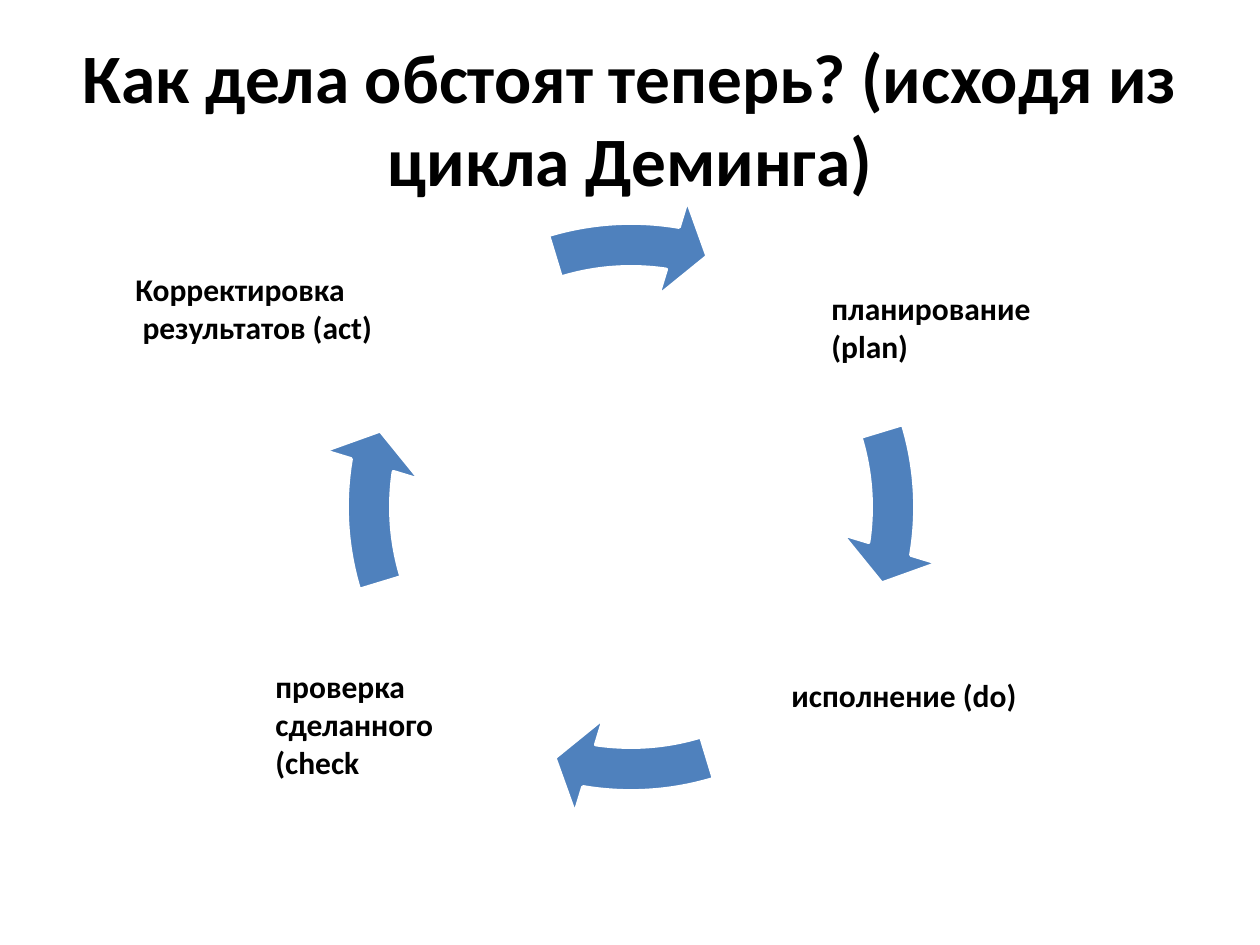
import pptx
import pptx.dml.color
import pptx.enum.shapes
import pptx.enum.text
import pptx.util
from dataclasses import dataclass


@dataclass(frozen=True)
class Theme:
    font: str = "Calibri"
    ink: str = "000000"
    blue: str = "4F81BD"
    edge: str = "FFFFFF"
    head: float = 39.6
    body: float = 18


theme = Theme()
SCALE = 914400 / 126  # EMU per px


def box(*sizes):
    """Turn px lengths into EMU."""
    return [pptx.util.Emu(round(size * SCALE)) for size in sizes]


def style(frame, size):
    for line in frame.paragraphs:
        for run in line.runs:
            run.font.name = theme.font
            run.font.size = pptx.util.Pt(size)
            run.font.bold = True
            run.font.color.rgb = pptx.dml.color.RGBColor.from_string(theme.ink)


deck = pptx.Presentation()
deck.slide_width, deck.slide_height = box(1260, 945)
slide = deck.slides.add_slide(deck.slide_layouts[5])

title = slide.shapes.title
title.left, title.top, title.width, title.height = box(63, 38, 1134, 158)
frame = title.text_frame
frame.text = "Как дела обстоят теперь? (исходя из цикла Деминга)"
frame.auto_size = pptx.enum.text.MSO_AUTO_SIZE.NONE
frame.vertical_anchor = pptx.enum.text.MSO_ANCHOR.MIDDLE
frame.paragraphs[0].alignment = pptx.enum.text.PP_ALIGN.CENTER
style(frame, theme.head)

# Four arrows share one ring; adjustment angles count 216 to a full turn
TURN = 216
cycle = slide.shapes.add_group_shape()
for step in range(4):
    arrow = cycle.shapes.add_shape(
        pptx.enum.shapes.MSO_SHAPE.CIRCULAR_ARROW, *box(319, 195, 624, 624))
    shift = step * TURN / 4
    values = (0.07, 4.65, 5.49 + shift, (205.86 + shift) % TURN, 0.08)
    for index, value in enumerate(values):
        arrow.adjustments[index] = value
    arrow.shadow.inherit = False
    arrow.fill.solid()
    arrow.fill.fore_color.rgb = pptx.dml.color.RGBColor.from_string(theme.blue)
    arrow.line.color.rgb = pptx.dml.color.RGBColor.from_string(theme.edge)
    arrow.line.width = pptx.util.Pt(2)

stages = [
    ("планирование (plan)", 819, 283, 268, 127),
    ("исполнение (do)", 779, 670, 277, 89),
    ("проверка сделанного (check", 263, 661, 268, 127),
    ("Корректировка\n результатов (act)", 123, 264, 268, 89),
]
for text, *place in stages:
    label = slide.shapes.add_textbox(*box(*place))
    frame = label.text_frame
    frame.word_wrap = True
    frame.auto_size = pptx.enum.text.MSO_AUTO_SIZE.SHAPE_TO_FIT_TEXT
    frame.text = text
    style(frame, theme.body)

deck.save("out.pptx")
